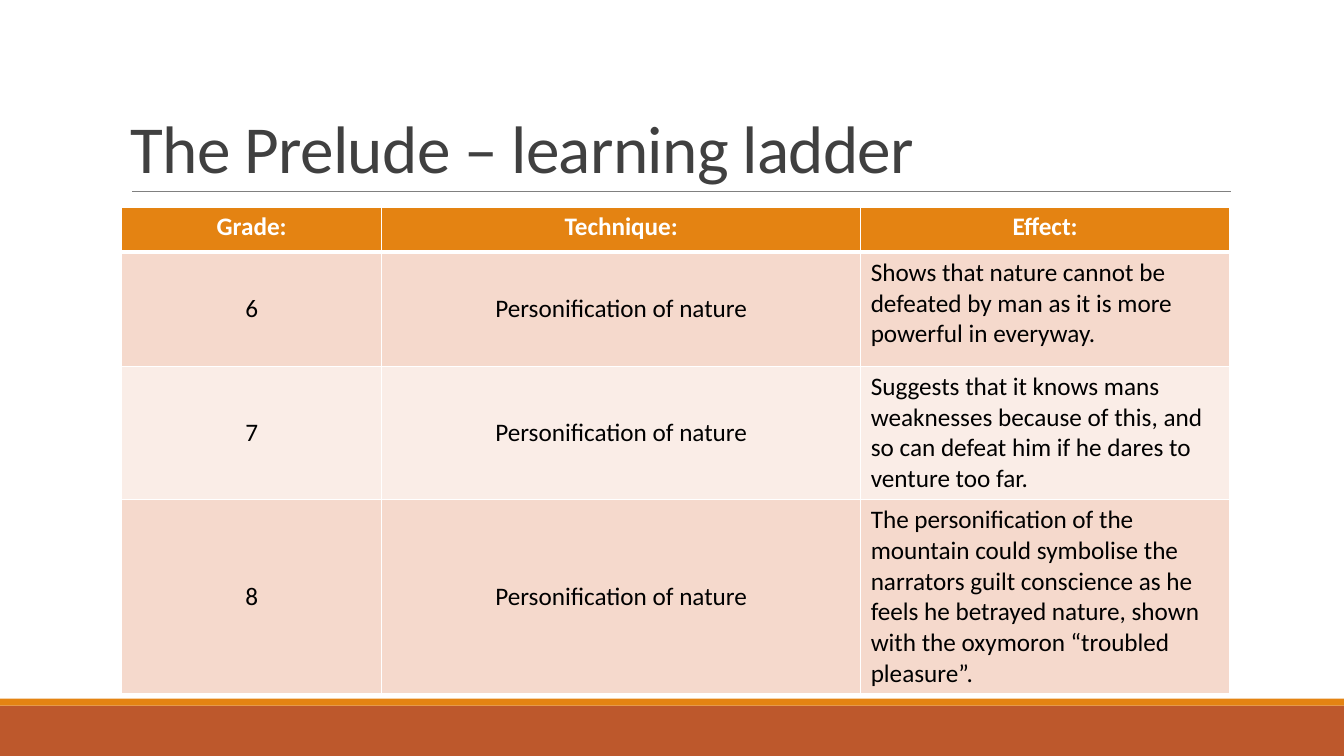
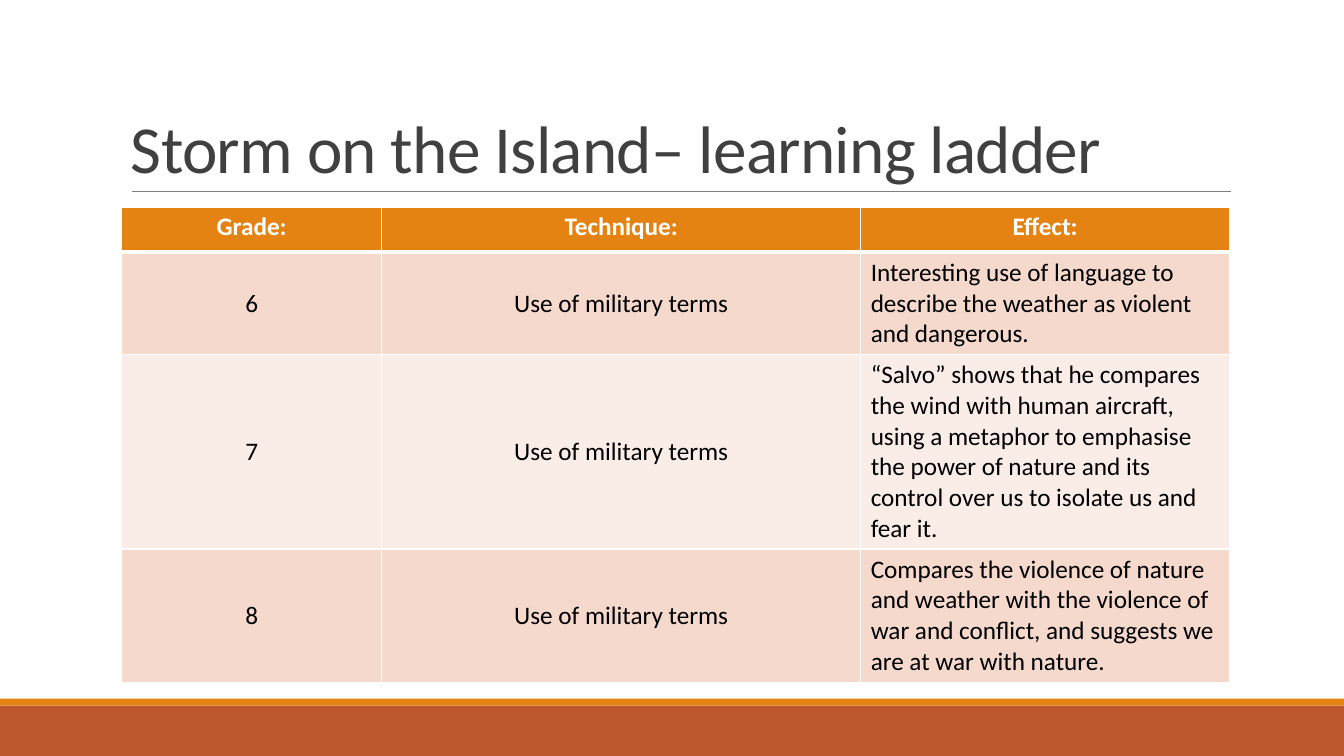
import pptx
import pptx.util
import pptx.dml.color
import pptx.enum.shapes
import pptx.enum.text
import pptx.oxml
import pptx.oxml.ns

Pt = pptx.util.Pt
RGBColor = pptx.dml.color.RGBColor
PP_ALIGN = pptx.enum.text.PP_ALIGN
MSO_ANCHOR = pptx.enum.text.MSO_ANCHOR

WHITE = RGBColor(0xFF, 0xFF, 0xFF)
BLACK = RGBColor(0x00, 0x00, 0x00)
ORANGE = RGBColor(0xE4, 0x83, 0x12)
RUST = RGBColor(0xBD, 0x58, 0x2C)
GREY = RGBColor(0x80, 0x80, 0x80)
DARK = RGBColor(0x40, 0x40, 0x40)
BANDS = (RGBColor(0xF5, 0xD9, 0xCC), RGBColor(0xFA, 0xED, 0xE7))

FONT = "Calibri"
SLIDE_W, SLIDE_H = 960, 540
TITLE_BOX = (86.4, 22.6, 792, 114.4)
TABLE_LEFT, TABLE_TOP = 86.8, 147.8
COL_WIDTHS = (186, 342, 263.5)
HEADERS = ("Grade:", "Technique:", "Effect:")
HEADER_H = 32.4

LADDERS = (
    ("The Prelude – learning ladder", "Personification of nature", (
        ("6", 81.4, "Shows that nature cannot be defeated by man as it is more "
                    "powerful in everyway."),
        ("7", 95.2, "Suggests that it knows mans weaknesses because of this, and so can "
                    "defeat him if he dares to venture too far."),
        ("8", 139, "The personification of the mountain could symbolise the narrators "
                   "guilt conscience as he feels he betrayed nature, shown with the "
                   "oxymoron “troubled pleasure”."),
    )),
    ("Storm on the Island– learning ladder", "Use of military terms", (
        ("6", 73, "Interesting use of language to describe the weather as violent "
                  "and dangerous."),
        ("7", 139, "“Salvo” shows that he compares the wind with human aircraft, using "
                   "a metaphor to emphasise the power of nature and its control over us "
                   "to isolate us and fear it."),
        ("8", 95.2, "Compares the violence of nature and weather with the violence of "
                    "war and conflict, and suggests we are at war with nature."),
    )),
)


def style_font(p, size, color, bold=False):
    """Set the font of a whole paragraph."""
    p.font.name = FONT
    p.font.size = Pt(size)
    p.font.bold = bold
    p.font.color.rgb = color


def add_band(slide, top, height, color):
    """Draw a full-width plain band."""
    sp = slide.shapes.add_shape(pptx.enum.shapes.MSO_SHAPE.RECTANGLE,
                                0, Pt(top), Pt(SLIDE_W), Pt(height))
    sp.shadow.inherit = False
    sp.fill.solid()
    sp.fill.fore_color.rgb = color
    sp.line.fill.background()


def add_footer(slide, top, height, stripe=5):
    """Draw the footer band with a thin stripe above it."""
    add_band(slide, top, height, RUST)
    add_band(slide, top - stripe, stripe, ORANGE)


def add_title(slide, text, box):
    """Place the title in its box, with a rule along the bottom."""
    left, top, width, height = box
    line = slide.shapes.add_connector(
        pptx.enum.shapes.MSO_CONNECTOR.STRAIGHT,
        Pt(left + 8), Pt(top + height), Pt(left + width + 0.7), Pt(top + height))
    line.line.color.rgb = GREY
    line.line.width = Pt(0.5)
    line._element.spPr.append(pptx.oxml.parse_xml(
        f'<a:effectLst {pptx.oxml.ns.nsdecls("a")}/>'))

    sp = slide.shapes.add_textbox(*map(Pt, box))
    tf = sp.text_frame
    tf.word_wrap = True
    tf.vertical_anchor = MSO_ANCHOR.BOTTOM
    p = tf.paragraphs[0]
    p.text = text
    p.line_spacing = 0.85
    style_font(p, 48, DARK)
    p.font._element.set("spc", "-50") if hasattr(p.font, "_element") else p.font._rPr.set("spc", "-50")


def set_borders(cell, **widths):
    """Give a cell white borders of the given widths."""
    tc_pr = cell._tc.get_or_add_tcPr()
    for side, width in widths.items():
        tc_pr.append(pptx.oxml.parse_xml(
            f'<a:ln{side} {pptx.oxml.ns.nsdecls("a")} w="{Pt(width)}">'
            f'<a:solidFill><a:srgbClr val="{WHITE}"/></a:solidFill></a:ln{side}>'))


def fill_cell(cell, text, row, col):
    """Write and style one table cell by its row and column."""
    header = row == 0
    set_borders(cell, L=1, R=1, T=3 if row == 1 else 1, B=3 if header else 1)
    cell.fill.solid()
    cell.fill.fore_color.rgb = ORANGE if header else BANDS[(row - 1) % 2]
    effect = col == len(HEADERS) - 1
    cell.vertical_anchor = MSO_ANCHOR.TOP if header or effect else MSO_ANCHOR.MIDDLE
    p = cell.text_frame.paragraphs[0]
    p.text = text
    p.alignment = PP_ALIGN.LEFT if effect and not header else PP_ALIGN.CENTER
    style_font(p, 18, WHITE if header else BLACK, header)


def add_ladder(slide, technique, steps, left, top):
    """Place the table of grades, technique and effects."""
    rows = [HEADERS] + [(grade, technique, effect) for grade, _, effect in steps]
    heights = [HEADER_H] + [height for _, height, _ in steps]
    table = slide.shapes.add_table(
        len(rows), len(COL_WIDTHS), Pt(left), Pt(top),
        Pt(sum(COL_WIDTHS)), Pt(sum(heights))).table
    table.first_row = table.horz_banding = False
    for column, width in zip(table.columns, COL_WIDTHS):
        column.width = Pt(width)
    for r, (texts, height) in enumerate(zip(rows, heights)):
        table.rows[r].height = Pt(height)
        for c, text in enumerate(texts):
            fill_cell(table.cell(r, c), text, r, c)


def add_ladder_slide(prs, title, technique, steps):
    """Build one learning ladder slide."""
    slide = prs.slides.add_slide(prs.slide_layouts[6])
    add_footer(slide, SLIDE_H - 36, 36)
    add_title(slide, title, TITLE_BOX)
    add_ladder(slide, technique, steps, TABLE_LEFT, TABLE_TOP)


def main():
    """Build and save the presentation."""
    prs = pptx.Presentation()
    prs.slide_width, prs.slide_height = Pt(SLIDE_W), Pt(SLIDE_H)
    for ladder in LADDERS:
        add_ladder_slide(prs, *ladder)
    prs.save("out.pptx")


if __name__ == "__main__":
    main()
